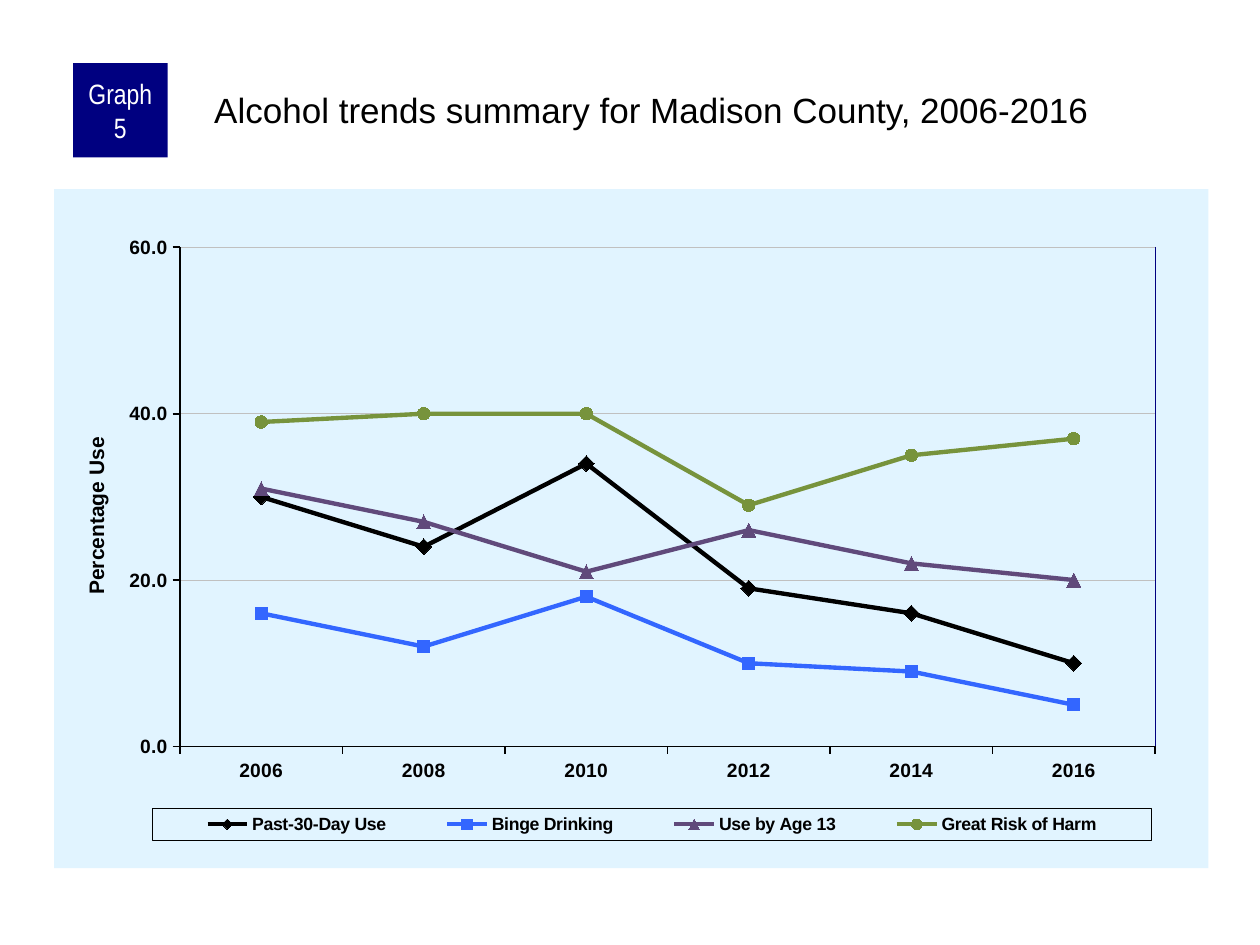
from lxml import etree
from pptx import Presentation
from pptx.chart.data import CategoryChartData
from pptx.dml.color import RGBColor
from pptx.enum.chart import (XL_CHART_TYPE, XL_LEGEND_POSITION,
                             XL_MARKER_STYLE, XL_TICK_MARK)
from pptx.enum.shapes import MSO_CONNECTOR, MSO_SHAPE
from pptx.enum.text import MSO_ANCHOR, PP_ALIGN
from pptx.oxml import parse_xml
from pptx.oxml.ns import nsdecls, qn
from pptx.util import Inches, Pt

LINE_MARKERS = XL_CHART_TYPE.LINE_MARKERS
LEGEND_BOTTOM = XL_LEGEND_POSITION.BOTTOM
TICK_OUT = XL_TICK_MARK.OUTSIDE
STRAIGHT = MSO_CONNECTOR.STRAIGHT
RECTANGLE = MSO_SHAPE.RECTANGLE
TOP, MIDDLE = MSO_ANCHOR.TOP, MSO_ANCHOR.MIDDLE
LEFT, CENTER = PP_ALIGN.LEFT, PP_ALIGN.CENTER
DIAMOND, SQUARE = XL_MARKER_STYLE.DIAMOND, XL_MARKER_STYLE.SQUARE
TRIANGLE, CIRCLE = XL_MARKER_STYLE.TRIANGLE, XL_MARKER_STYLE.CIRCLE

BLACK, WHITE, NAVY = "000000", "FFFFFF", "000080"
PALE_BLUE, GRID_GREY = "E1F4FF", "C0C0C0"

YEARS = ["2006", "2008", "2010", "2012", "2014", "2016"]
TRENDS = [
    ("Past-30-Day Use", [30, 24, 34, 19, 16, 10], BLACK, DIAMOND, 9),
    ("Binge Drinking", [16, 12, 18, 10, 9, 5], "3366FF", SQUARE, 7),
    ("Use by Age 13", [31, 27, 21, 26, 22, 20], "604A7B", TRIANGLE, 8),
    ("Great Risk of Harm", [39, 40, 40, 29, 35, 37], "77933C", CIRCLE, 7),
]


def rgb(value):
    return RGBColor.from_string(value)


def set_layout(element, x, y, w=None, h=None, inner=False):
    """Place a chart part by fractions of the chart's size."""
    for old in element.findall(qn("c:layout")):
        element.remove(old)
    layout = parse_xml(f"<c:layout {nsdecls('c')}><c:manualLayout/></c:layout>")
    settings = {"layoutTarget": "inner" if inner else None,
                "xMode": "edge", "yMode": "edge", "x": x, "y": y, "w": w, "h": h}
    for tag, value in settings.items():
        if value is not None:
            etree.SubElement(layout[0], qn(f"c:{tag}")).set("val", str(value))
    overlay = element.find(qn("c:overlay"))
    element.insert(0 if overlay is None else element.index(overlay), layout)


def add_format_after(element, content):
    element.addnext(parse_xml(f"<c:spPr {nsdecls('c', 'a')}>{content}</c:spPr>"))


def solid(color):
    return f'<a:solidFill><a:srgbClr val="{color}"/></a:solidFill>'


class TrendSlide:
    """Holds the style and the current slide."""

    font_name = "Arial"

    def __init__(self, deck):
        self.slide = deck.slides.add_slide(deck.slide_layouts[6])

    def style_font(self, font, size, color=BLACK, bold=False, name=None):
        font.color.rgb = rgb(color)
        values = {"size": Pt(size), "bold": bold, "name": name or self.font_name}
        for attribute, value in values.items():
            setattr(font, attribute, value)

    def style_line(self, line, color, width):
        line.color.rgb = rgb(color)
        line.width = Pt(width)

    def set_text(self, shape, text, size, color, margins, anchor, align, name=None):
        frame = shape.text_frame
        values = dict(zip(("margin_left", "margin_top", "margin_right",
                           "margin_bottom"), map(Inches, margins)))
        values.update(word_wrap=True, vertical_anchor=anchor)
        for attribute, value in values.items():
            setattr(frame, attribute, value)
        paragraph = frame.paragraphs[0]
        paragraph.alignment = align
        run = paragraph.add_run()
        run.text = text
        self.style_font(run.font, size, color, name=name)

    def badge(self, text, *box):
        square = self.slide.shapes.add_shape(RECTANGLE, *map(Inches, box))
        square.shadow.inherit = False
        square.fill.solid()
        square.fill.fore_color.rgb = rgb(NAVY)
        square.line.fill.background()
        self.set_text(square, text, 16, WHITE, (0.05, 0, 0.05, 0), MIDDLE, CENTER,
                      "Arial Narrow")

    def title(self, text, *box):
        heading = self.slide.shapes.add_textbox(*map(Inches, box))
        self.set_text(heading, text, 20, BLACK, (0.03, 0.03, 0, 0), TOP, LEFT)

    def rule(self, color, width, *ends):
        line = self.slide.shapes.add_connector(STRAIGHT, *map(Inches, ends))
        self.style_line(line.line, color, width)
        etree.SubElement(line._element.spPr, qn("a:effectLst"))

    def axis(self, axis):
        axis.major_tick_mark = TICK_OUT
        self.style_font(axis.tick_labels.font, 11, bold=True)
        self.style_line(axis.format.line, BLACK, 1)

    def trend_chart(self, *box):
        data = CategoryChartData(number_format="0.0")
        data.categories = YEARS
        for name, values, *_ in TRENDS:
            data.add_series(name, values)
        chart = self.slide.shapes.add_chart(
            LINE_MARKERS, *map(Inches, box), data).chart
        chart.has_title = False
        self.style_font(chart.font, 8)
        chart_part = chart._chartSpace.find(qn("c:chart"))
        add_format_after(chart_part, solid(PALE_BLUE) + "<a:ln><a:noFill/></a:ln>")
        set_layout(chart_part.find(qn("c:plotArea")), 0.109, 0.086, 0.845, 0.735,
                   inner=True)

        plot = chart.plots[0]
        plot.vary_by_categories = False
        for series, (_, _, color, symbol, size) in zip(plot.series, TRENDS):
            series.smooth = False
            self.style_line(series.format.line, color, 2.5)
            marker = series.marker
            marker.style, marker.size = symbol, size
            marker.format.fill.solid()
            marker.format.fill.fore_color.rgb = rgb(color)
            self.style_line(marker.format.line, color, 0.75)

        self.axis(chart.category_axis)
        usage = chart.value_axis
        self.axis(usage)
        scale = {"minimum_scale": 0, "maximum_scale": 60, "major_unit": 20,
                 "has_major_gridlines": True}
        for attribute, value in scale.items():
            setattr(usage, attribute, value)
        self.style_line(usage.major_gridlines.format.line, GRID_GREY, 0.25)
        usage.tick_labels.number_format = "0.0"
        usage.tick_labels.number_format_is_linked = False
        caption = usage.axis_title
        caption.text_frame.text = "Percentage Use"
        self.style_font(caption.text_frame.paragraphs[0].runs[0].font, 12, bold=True)
        set_layout(caption._element, 0.022, 0.36)

        chart.has_legend = True
        legend = chart.legend
        legend.position = LEGEND_BOTTOM
        legend.include_in_layout = False
        self.style_font(legend.font, 10.1, bold=True)
        set_layout(legend._element, 0.085, 0.912, 0.866, 0.047)
        add_format_after(legend._element.find(qn("c:overlay")),
                         f'<a:noFill/><a:ln w="{Pt(0.25)}">{solid(BLACK)}</a:ln>')


def main():
    deck = Presentation()
    deck.slide_width, deck.slide_height = Inches(10), Inches(7.5)
    slide = TrendSlide(deck)
    slide.badge("Graph 5", 0.58, 0.5, 0.75, 0.75)
    slide.title("Alcohol trends summary for Madison County, 2006-2016",
                1.67, 0.67, 7.92, 0.83)
    slide.trend_chart(0.43, 1.5, 9.16, 5.39)
    slide.rule(NAVY, 1, 9.17, 1.96, 9.17, 5.92)
    deck.save("out.pptx")


if __name__ == "__main__":
    main()
